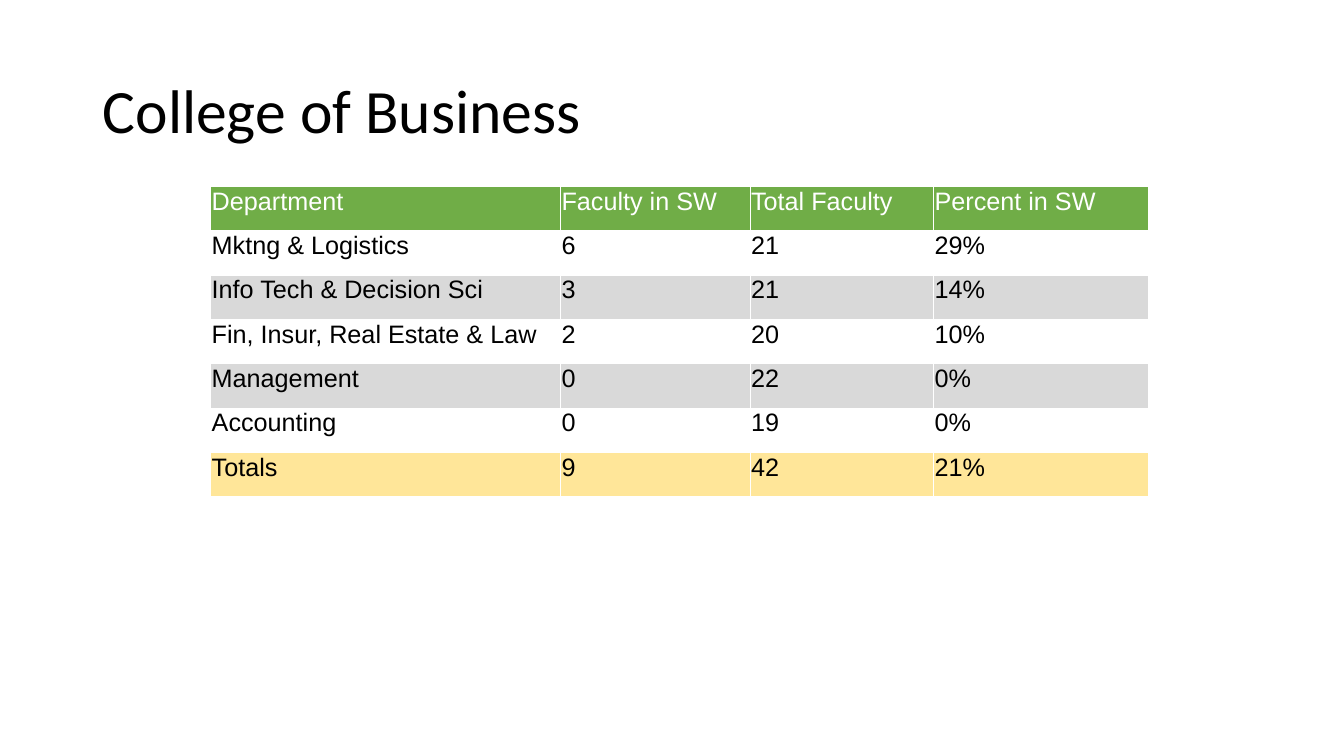
import pptx
import pptx.util
import pptx.dml.color
import pptx.enum.text
import pptx.oxml
import pptx.oxml.ns

Inches = pptx.util.Inches
THEME = {
    "title": {"name": "Calibri", "size": pptx.util.Pt(44)},
    "cell": {"name": "Arial", "size": pptx.util.Pt(18)},
    "text": "000000",
    "header_text": "FFFFFF",
    "header": "70AD47",
    "band": "D9D9D9",
    "totals": "FFE699",
    "border": "FFFFFF",
    "border_width": pptx.util.Pt(1),
}
DEPARTMENTS = [
    ("Department", "Faculty in SW", "Total Faculty", "Percent in SW"),
    ("Mktng & Logistics", "6", "21", "29%"),
    ("Info Tech & Decision Sci", "3", "21", "14%"),
    ("Fin, Insur, Real Estate & Law", "2", "20", "10%"),
    ("Management", "0", "22", "0%"),
    ("Accounting", "0", "19", "0%"),
    ("Totals", "9", "42", "21%"),
]
COLUMN_WIDTHS = [3.47, 1.88, 1.82, 2.13]
ROW_HEIGHT = 0.44
MARGINS = {"margin_left": 0.01, "margin_top": 0.01, "margin_right": 0.01, "margin_bottom": 0}


def format_font(font, style, color):
    for name, value in style.items():
        setattr(font, name, value)
    font.color.rgb = pptx.dml.color.RGBColor.from_string(color)


def add_borders(cell):
    properties = cell._tc.get_or_add_tcPr()
    for side in ("lnL", "lnR", "lnT", "lnB"):
        properties.append(pptx.oxml.parse_xml(
            f'<a:{side} {pptx.oxml.ns.nsdecls("a")} w="{THEME["border_width"]}">'
            f'<a:solidFill><a:srgbClr val="{THEME["border"]}"/></a:solidFill></a:{side}>'
        ))


deck = pptx.Presentation()
deck.slide_width = Inches(13.33)
deck.slide_height = Inches(7.5)
page = deck.slides.add_slide(deck.slide_layouts.get_by_name("Title Only"))

title = page.shapes.title
title_box = {"left": 0.92, "top": 0.4, "width": 11.5, "height": 1.45}
for name, value in title_box.items():
    setattr(title, name, Inches(value))
title.text_frame.text = "College of Business"
title.text_frame.auto_size = pptx.enum.text.MSO_AUTO_SIZE.NONE
title.text_frame.vertical_anchor = pptx.enum.text.MSO_ANCHOR.MIDDLE
para = title.text_frame.paragraphs[0]
para.alignment = pptx.enum.text.PP_ALIGN.LEFT
para.line_spacing = 0.9
format_font(para.runs[0].font, THEME["title"], THEME["text"])

last_row = len(DEPARTMENTS) - 1
table = page.shapes.add_table(
    len(DEPARTMENTS), len(COLUMN_WIDTHS), Inches(2.09), Inches(1.85),
    Inches(sum(COLUMN_WIDTHS)), Inches(ROW_HEIGHT * len(DEPARTMENTS)),
).table
table.first_row = False
table.horz_banding = False
for column, width in zip(table.columns, COLUMN_WIDTHS):
    column.width = Inches(width)

for row_index, values in enumerate(DEPARTMENTS):
    table.rows[row_index].height = Inches(ROW_HEIGHT)
    banded = THEME["band"] if row_index % 2 == 0 else None
    fill = {0: THEME["header"], last_row: THEME["totals"]}.get(row_index, banded)
    color = THEME["header_text"] if row_index == 0 else THEME["text"]
    for column_index, value in enumerate(values):
        cell = table.cell(row_index, column_index)
        cell.text = value
        for name, margin in MARGINS.items():
            setattr(cell, name, Inches(margin))
        add_borders(cell)
        if fill:
            cell.fill.solid()
            cell.fill.fore_color.rgb = pptx.dml.color.RGBColor.from_string(fill)
        else:
            cell.fill.background()
        span = cell.text_frame.paragraphs[0].runs[0]
        format_font(span.font, THEME["cell"], color)
        span.font.bold = False

deck.save("out.pptx")
